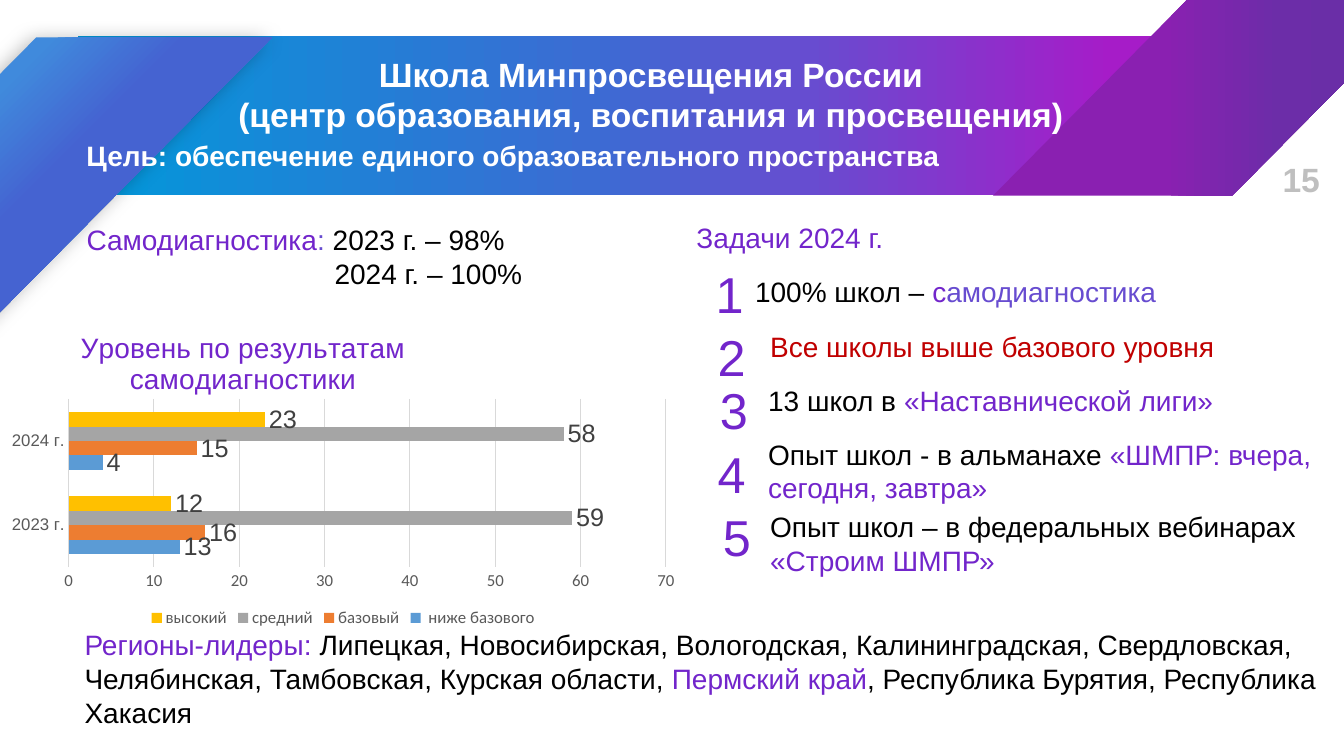
import pptx
import pptx.chart.data
import pptx.dml.color
import pptx.enum.chart
import pptx.enum.shapes
import pptx.enum.text
import pptx.oxml
import pptx.oxml.ns
import pptx.util

Inches = pptx.util.Inches
Pt = pptx.util.Pt
RGBColor = pptx.dml.color.RGBColor
SHAPE = pptx.enum.shapes.MSO_SHAPE
ALIGN = pptx.enum.text.PP_ALIGN
NS = pptx.oxml.ns.nsdecls("a")

WHITE = RGBColor(0xFF, 0xFF, 0xFF)
BLACK = RGBColor(0x00, 0x00, 0x00)
PURPLE = RGBColor(0x72, 0x25, 0xCB)
VIOLET = RGBColor(0x67, 0x4C, 0xD0)
RED = RGBColor(0xC0, 0x00, 0x00)
SILVER = RGBColor(0xBF, 0xBF, 0xBF)
GRID = RGBColor(0xD9, 0xD9, 0xD9)
AXIS = RGBColor(0x59, 0x59, 0x59)
LABEL = RGBColor(0x40, 0x40, 0x40)

BANNER = [(0, RGBColor(0x01, 0x99, 0xDA)), (46, RGBColor(0x3B, 0x6C, 0xD3)),
          (64, RGBColor(0x64, 0x4F, 0xD0)), (93, RGBColor(0xA6, 0x1C, 0xC8))]
LEFT_BAND = [(37, RGBColor(0x40, 0x8A, 0xDC)), (54, RGBColor(0x45, 0x63, 0xD1))]
RIGHT_BAND = [(26, RGBColor(0x8A, 0x20, 0xB1)), (44, RGBColor(0x6C, 0x2D, 0xA8)),
              (68, RGBColor(0x62, 0x31, 0xA5))]

LEVELS = [
    (" ниже базового", (13, 4), RGBColor(0x5B, 0x9B, 0xD5)),
    ("базовый", (16, 15), RGBColor(0xED, 0x7D, 0x31)),
    ("средний", (59, 58), RGBColor(0xA5, 0xA5, 0xA5)),
    ("высокий", (12, 23), RGBColor(0xFF, 0xC0, 0x00)),
]

TASKS = [
    ((7.0, 2.63), (7.39, 2.67, 4.62, 0.44),
     [("100% школ – ", BLACK), ("с", PURPLE), ("амодиагностика", VIOLET)]),
    ((7.02, 3.25), (7.54, 3.22, 5.29, 0.44),
     [("Все школы выше базового уровня", RED)]),
    ((7.04, 3.78), (7.52, 3.76, 5.4, 0.44),
     [("13 школ в ", BLACK), ("«Наставнической лиги»", PURPLE)]),
    ((7.02, 4.41), (7.52, 4.29, 5.61, 0.77),
     [("Опыт школ - в альманахе ", BLACK), ("«ШМПР: вчера, сегодня, завтра»", PURPLE)]),
    ((7.07, 5.04), (7.54, 5.01, 5.63, 0.77),
     [("Опыт школ – в федеральных вебинарах ", BLACK), ("«Строим ШМПР»", PURPLE)]),
]


def set_font(font, size, color, name="Arial", bold=False):
    font.size, font.name, font.bold = Pt(size), name, bold
    font.color.rgb = color


def add_run(p, text, size=20, color=BLACK, bold=False):
    r = p.add_run()
    r.text = text
    set_font(r.font, size, color, bold=bold)


def set_layout(parent, x, y, w=None, h=None):
    for old in parent.findall(pptx.oxml.ns.qn("c:layout")):
        parent.remove(old)
    inner = '<c:layoutTarget val="inner"/>' if w else ""
    size = f'<c:w val="{w}"/><c:h val="{h}"/>' if w else ""
    return pptx.oxml.parse_xml(
        f'<c:layout {pptx.oxml.ns.nsdecls("c")}><c:manualLayout>{inner}'
        f'<c:xMode val="edge"/><c:yMode val="edge"/>'
        f'<c:x val="{x}"/><c:y val="{y}"/>{size}</c:manualLayout></c:layout>')


class SlideBuilder:
    def __init__(self, prs):
        self.s = prs.slides.add_slide(prs.slide_layouts[5])

    def band(self, kind, box, stops, angle=0, shadow=False):
        sp = self.s.shapes.add_shape(kind, *map(Inches, box))
        sp.shadow.inherit = False
        sp.line.fill.background()
        if kind == SHAPE.PARALLELOGRAM:
            sp.adjustments[0] = 0.99
        gs = "".join(f'<a:gs pos="{pos * 1000}"><a:srgbClr val="{color}"/></a:gs>'
                     for pos, color in stops)
        sp._element.spPr.find(pptx.oxml.ns.qn("a:prstGeom")).addnext(pptx.oxml.parse_xml(
            f'<a:gradFill {NS} rotWithShape="1"><a:gsLst>{gs}</a:gsLst>'
            f'<a:lin ang="{angle * 60000}" scaled="0"/></a:gradFill>'))
        if shadow:
            sp._element.spPr.find(pptx.oxml.ns.qn("a:effectLst")).append(pptx.oxml.parse_xml(
                f'<a:outerShdw {NS} blurRad="{Pt(14)}" dist="{Pt(3)}" dir="{158 * 60000}" '
                'algn="ctr" rotWithShape="0"><a:srgbClr val="000000">'
                '<a:alpha val="28000"/></a:srgbClr></a:outerShdw>'))

    def fill_text(self, sp, paragraphs, size, bold, align, spacing, indents):
        tf = sp.text_frame
        tf.word_wrap = True
        tf.auto_size = pptx.enum.text.MSO_AUTO_SIZE.SHAPE_TO_FIT_TEXT
        tf.vertical_anchor = pptx.enum.text.MSO_ANCHOR.TOP
        for i, runs in enumerate(paragraphs):
            p = tf.add_paragraph() if i else tf.paragraphs[0]
            p.alignment, p.line_spacing = align, spacing
            if i in indents:
                p._p.get_or_add_pPr().set("marL", str(Inches(indents[i])))
            for text, color in runs:
                add_run(p, text, size, color, bold)

    def text(self, box, *paragraphs, size=20, bold=False, align=ALIGN.LEFT,
             spacing=1.0, indents={}):
        sp = self.s.shapes.add_textbox(*map(Inches, box))
        self.fill_text(sp, paragraphs, size, bold, align, spacing, indents)

    def title(self, box, *lines):
        sp = self.s.shapes.title
        sp.left, sp.top, sp.width, sp.height = map(Inches, box)
        self.fill_text(sp, [[(line, WHITE)] for line in lines], 24, True, ALIGN.CENTER, 1.0, {})
        self.s.shapes._spTree.append(sp._element)

    def bar_chart(self, box, title, categories, levels):
        data = pptx.chart.data.CategoryChartData()
        data.categories = categories
        for name, values, _ in levels:
            data.add_series(name, values)
        chart = self.s.shapes.add_chart(
            pptx.enum.chart.XL_CHART_TYPE.BAR_CLUSTERED, *map(Inches, box), data).chart
        set_font(chart.font, 10, BLACK, "Calibri")
        chart.has_title = True
        p = chart.chart_title.text_frame.paragraphs[0]
        add_run(p, title, 20, PURPLE)
        title_xml = chart.chart_title._element
        layout = set_layout(title_xml, 0.11, 0.05)
        title_xml.find(pptx.oxml.ns.qn("c:tx")).addnext(layout)
        chart.chart_title.include_in_layout = False
        plot_area = chart._chartSpace.chart.plotArea
        plot_area.insert(0, set_layout(plot_area, 0.1, 0.28, 0.87, 0.52))

        chart.has_legend = True
        chart.legend.position = pptx.enum.chart.XL_LEGEND_POSITION.BOTTOM
        chart.legend.include_in_layout = False
        set_font(chart.legend.font, 12, AXIS, "Calibri")

        cat, val = chart.category_axis, chart.value_axis
        for axis, name in ((cat, "Arial"), (val, "Calibri")):
            axis.major_tick_mark = pptx.enum.chart.XL_TICK_MARK.NONE
            set_font(axis.tick_labels.font, 12, AXIS, name)
        val.minimum_scale, val.maximum_scale, val.major_unit = 0, 70, 10
        val.format.line.fill.background()
        val.has_major_gridlines = True
        for line in (cat.format.line, val.major_gridlines.format.line):
            line.color.rgb, line.width = GRID, Pt(0.75)

        plot = chart.plots[0]
        plot.gap_width, plot.overlap, plot.vary_by_categories = 182, 0, False
        for series, (_, _, color) in zip(plot.series, levels):
            series.format.fill.solid()
            series.format.fill.fore_color.rgb = color
            labels = series.data_labels
            labels.show_value = True
            labels.position = pptx.enum.chart.XL_LABEL_POSITION.OUTSIDE_END
            set_font(labels.font, 18, LABEL)


def main():
    prs = pptx.Presentation()
    prs.slide_width, prs.slide_height = Inches(13.33), Inches(7.5)
    b = SlideBuilder(prs)

    b.band(SHAPE.RECTANGLE, (0.77, 0.36, 11.04, 1.58), BANNER)
    b.band(SHAPE.PARALLELOGRAM, (-2.44, 0.37, 5.14, 2.83), LEFT_BAND, angle=45, shadow=True)
    b.band(SHAPE.PARALLELOGRAM, (9.85, -2.2, 6.47, 4.14), RIGHT_BAND)
    b.title((0.24, 0.48, 12.43, 0.91), "Школа Минпросвещения России",
            "(центр образования, воспитания и просвещения)")
    b.text((0.76, 1.32, 10.2, 0.44),
           [("Цель: обеспечение единого образовательного пространства", WHITE)], bold=True)
    b.text((12.33, 1.53, 0.86, 0.5), [("15", SILVER)], size=24, bold=True, align=ALIGN.RIGHT)

    b.text((0.76, 2.16, 4.62, 0.77),
           [("Самодиагностика", PURPLE), (": ", VIOLET), ("2023 г. – 98%", BLACK)],
           [("2024 г. – 100%", BLACK)], indents={1: 2.46})
    b.bar_chart((0, 3.06, 6.81, 3.21), "Уровень по результатам самодиагностики",
                ("2023 г.", "2024 г."), LEVELS)

    b.text((6.81, 2.14, 2.14, 0.44), [("Задачи 2024 г.", PURPLE)])
    for number, (corner, box, runs) in enumerate(TASKS, 1):
        b.text((*corner, 0.45, 0.65), [(str(number), PURPLE)],
               size=36, align=ALIGN.CENTER, spacing=0.9)
        b.text(box, runs)

    b.text((0.74, 6.18, 12.56, 1.11),
           [("Регионы-лидеры: ", PURPLE),
            ("Липецкая, Новосибирская, Вологодская, Калининградская, Свердловская, "
             "Челябинская, Тамбовская, Курская области, ", BLACK),
            ("Пермский край", PURPLE),
            (", Республика Бурятия, Республика Хакасия", BLACK)])
    prs.save("out.pptx")


if __name__ == "__main__":
    main()
